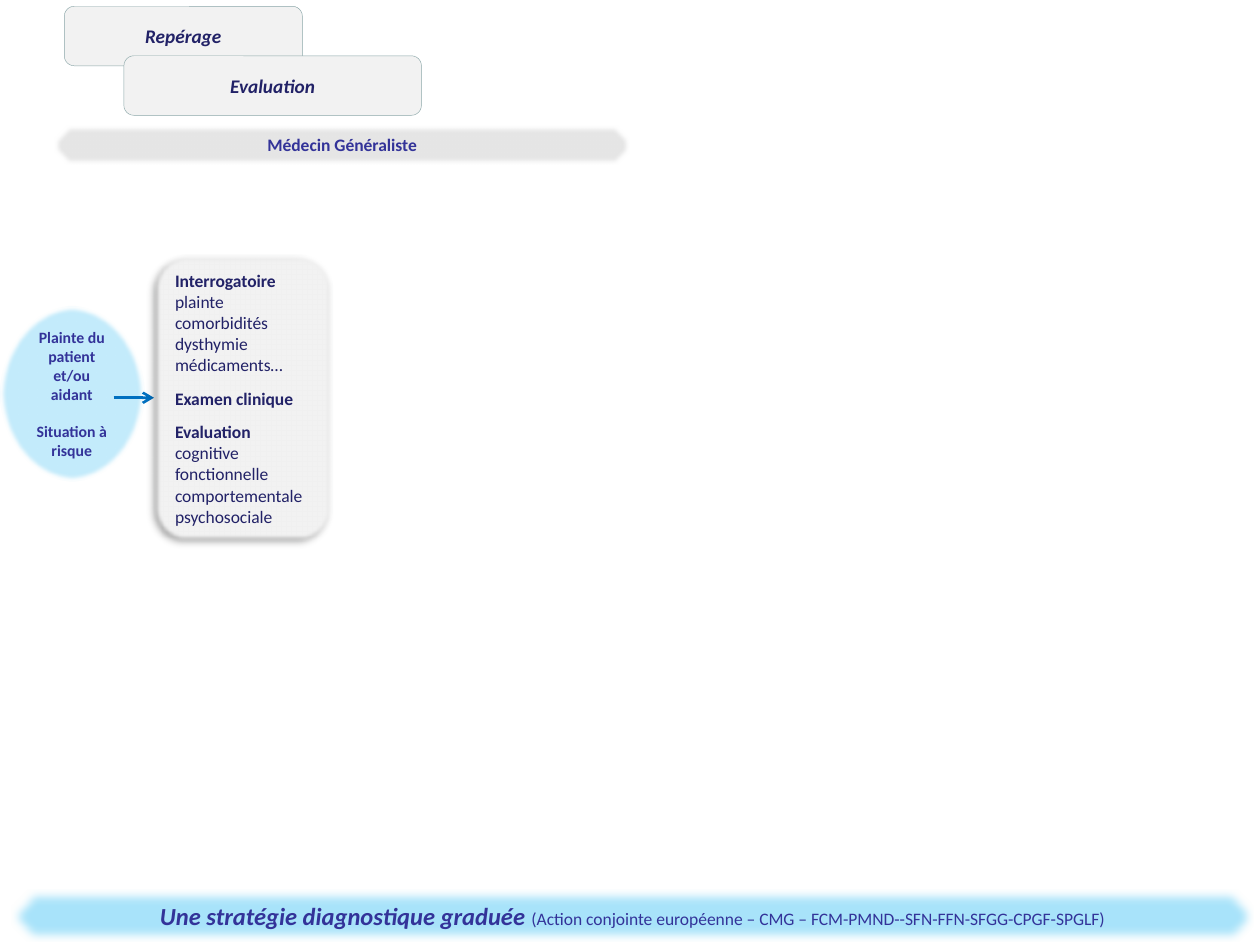
import dataclasses

import pptx
import pptx.dml.color
import pptx.enum.shapes
import pptx.enum.text
import pptx.oxml
import pptx.oxml.ns
import pptx.util

Pt = pptx.util.Pt
Kind = pptx.enum.shapes.MSO_SHAPE
Align = pptx.enum.text.PP_ALIGN
NS = pptx.oxml.ns.nsdecls("a")


@dataclasses.dataclass(frozen=True)
class Theme:
    font: str = "Calibri"
    blue: str = "333399"
    navy: str = "222267"
    gray: str = "F2F2F2"
    band: str = "E6E6E6"
    edge: str = "8AA6A8"
    sky: str = "A8E3FA"
    pale: str = "C4ECFC"
    rim: str = "00B0F0"
    arrow: str = "0070C0"
    title: float = 14
    step: float = 11
    body: float = 10
    small: float = 9


THEME = Theme()


def color(code):
    return pptx.dml.color.RGBColor.from_string(code)


def add_form(slide, kind, box, fill, line=None, width=0.5, soft=0, shade=False):
    form = slide.shapes.add_shape(kind, *map(Pt, box))
    form.fill.solid()
    form.fill.fore_color.rgb = color(fill)
    if line:
        form.line.color.rgb = color(line)
        form.line.width = Pt(width)
    else:
        form.line.fill.background()
    form.shadow.inherit = False
    glow = form._element.spPr.find(pptx.oxml.ns.qn("a:effectLst"))
    if shade:
        glow.append(pptx.oxml.parse_xml(
            f'<a:outerShdw {NS} blurRad="{Pt(4)}" dist="{Pt(3)}" dir="8100000" '
            'algn="tr" rotWithShape="0"><a:srgbClr val="000000">'
            '<a:alpha val="40000"/></a:srgbClr></a:outerShdw>'))
    if soft:
        glow.append(pptx.oxml.parse_xml(f'<a:softEdge {NS} rad="{Pt(soft)}"/>'))
    form.text_frame.word_wrap = True
    form.text_frame.vertical_anchor = pptx.enum.text.MSO_ANCHOR.MIDDLE
    return form


def add_run(para, text, size, ink, bold=True, slant=False):
    run = para.add_run()
    run.text = text
    font = run.font
    font.name, font.size = THEME.font, Pt(size)
    font.bold, font.italic = bold, slant
    font.color.rgb = color(ink)


def add_lines(form, lines, size, ink, align=Align.CENTER, slant=False):
    frame = form.text_frame
    for rank, (text, bold, gap) in enumerate(lines):
        para = frame.add_paragraph() if rank else frame.paragraphs[0]
        para.alignment = align
        if gap:
            para.space_before = Pt(gap)
        add_run(para, text, size, ink, bold, slant)


def add_step(slide, box, text):
    form = add_form(slide, Kind.FLOWCHART_ALTERNATE_PROCESS, box,
                    THEME.gray, THEME.edge, 0.25)
    add_lines(form, [(text, True, 0)], THEME.step, THEME.navy, slant=True)


def add_band(slide, box, fill, runs, soft):
    form = add_form(slide, Kind.OCTAGON, box, fill, soft=soft)
    form.text_frame.word_wrap = False
    para = form.text_frame.paragraphs[0]
    para.alignment = Align.CENTER
    for text, size, bold, slant in runs:
        add_run(para, text, size, THEME.blue, bold, slant)


def add_arrow(slide, start, end):
    line = slide.shapes.add_connector(
        pptx.enum.shapes.MSO_CONNECTOR.STRAIGHT, *map(Pt, start + end))
    line.line.color.rgb = color(THEME.arrow)
    line.line.width = Pt(1.5)
    line.line._get_or_add_ln().append(
        pptx.oxml.parse_xml(f'<a:tailEnd {NS} type="arrow"/>'))
    line._element.spPr.append(pptx.oxml.parse_xml(f"<a:effectLst {NS}/>"))


def add_card(slide, box, groups):
    form = add_form(slide, Kind.FLOWCHART_ALTERNATE_PROCESS, box,
                    THEME.gray, THEME.edge, soft=2.5, shade=True)
    lines = []
    for head, items in groups:
        lines.append((head, True, 7.3 if lines else 0))
        lines += [(item, False, 0) for item in items]
    add_lines(form, lines, THEME.body, THEME.navy, Align.LEFT)


def main():
    deck = pptx.Presentation()
    deck.slide_width, deck.slide_height = Pt(720), Pt(540)
    slide = deck.slides.add_slide(deck.slide_layouts[6])

    add_band(slide, (31, 71.5, 329, 22.3), THEME.band,
             [("Médecin Généraliste", THEME.body, True, False)], 2.5)
    add_band(slide, (6.3, 508.4, 710, 29.5), THEME.sky, [
        ("Une stratégie diagnostique graduée ", THEME.title, True, True),
        ("(Action conjointe européenne – CMG – FCM-PMND--SFN-FFN-SFGG-CPGF-SPGLF)",
         THEME.body, False, False)], 5)
    add_step(slide, (36.8, 3.6, 136, 34), "Repérage")

    need = add_form(slide, Kind.OVAL, (0, 175, 82, 100), THEME.pale,
                    THEME.rim, 0.75, soft=2.5)
    add_lines(need, [("Plainte du patient", True, 0), ("et/ou aidant", True, 0),
                     ("Situation à risque", True, 10.8)], THEME.small, THEME.blue)
    add_arrow(slide, (65, 227.3), (88, 227.3))
    add_card(slide, (88, 145.5, 102, 164), [
        ("Interrogatoire", ["plainte", "comorbidités", "dysthymie", "médicaments…"]),
        ("Examen clinique", []),
        ("Evaluation", ["cognitive", "fonctionnelle",
                        "comportementale psychosociale"])])
    add_step(slide, (70.8, 31.9, 170, 34), "Evaluation")
    deck.save("out.pptx")


if __name__ == "__main__":
    main()
